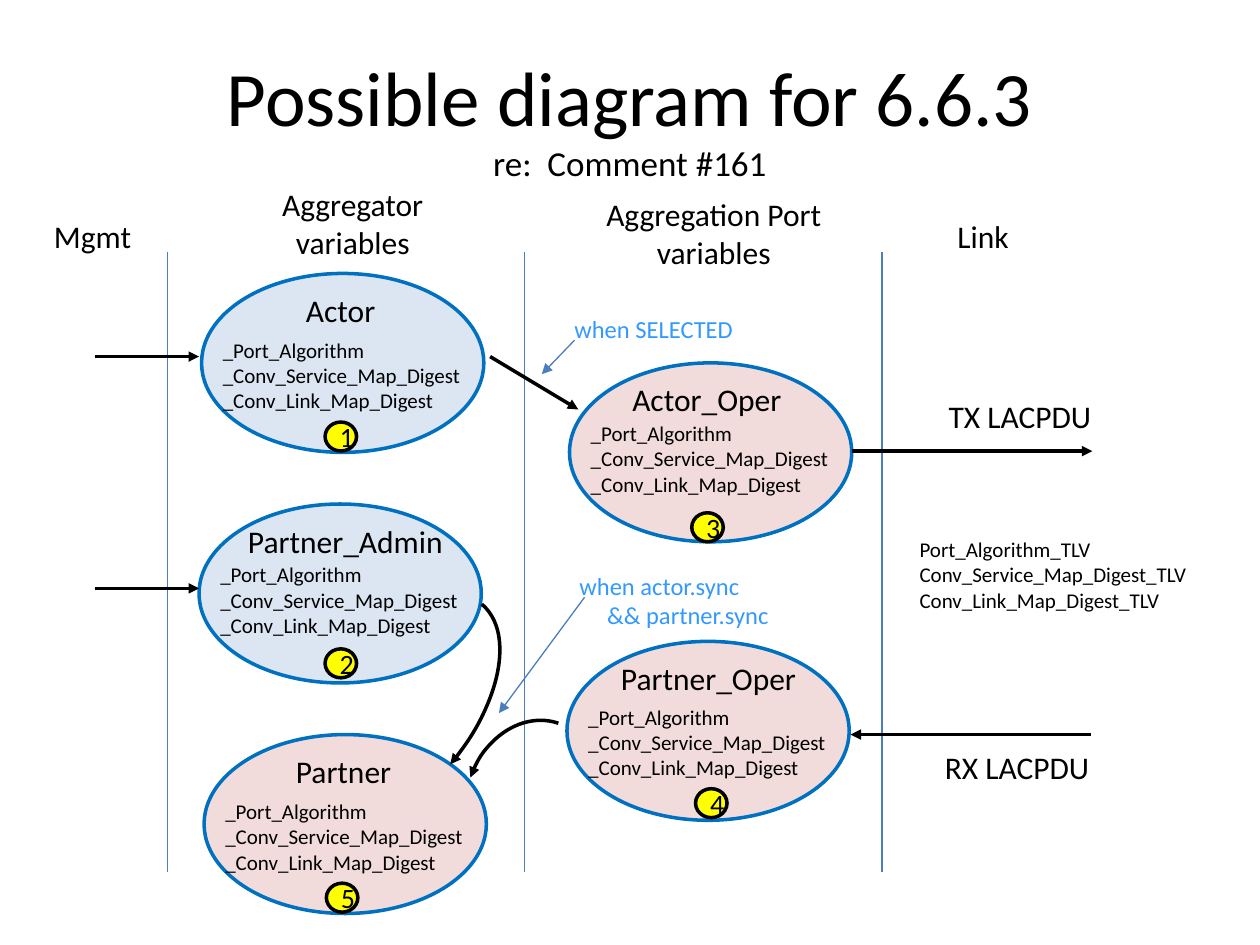
from lxml import etree
from pptx import Presentation
from pptx import util as u
from pptx.dml.color import RGBColor
from pptx.enum import shapes, text
from pptx.oxml.ns import qn

deck = Presentation()
deck.slide_width, deck.slide_height = u.Inches(10), u.Inches(7.5)
CELL = deck.slide_width // 10  # grid: 10 columns by 7.5 rows
FONT = "Calibri"
BLACK, BLUE, RIM, CALLOUT = "000000", "4B7EBC", "0070C0", "3399FF"
ADMIN, OPER, BADGE = "DCE6F2", "F2DCDB", "FFFF00"
color = RGBColor.from_string
LEFT, CENTER = text.PP_ALIGN.LEFT, text.PP_ALIGN.CENTER
OVAL, ARC = shapes.MSO_SHAPE.OVAL, shapes.MSO_SHAPE.ARC


def cells(*values):
    return [u.Emu(round(v * CELL)) for v in values]


def stroke(item, hex_color, width, end=None):
    """Outline an item without shadow; end is headEnd or tailEnd."""
    item.line.color.rgb = color(hex_color)
    item.line.width = u.Pt(width)
    if end:
        etree.SubElement(item.line._get_or_add_ln(), qn("a:" + end), type="triangle")
    etree.SubElement(item._element.spPr, qn("a:effectLst"))


slide = deck.slides.add_slide(deck.slide_layouts[5])
canvas = slide.shapes

# Title and subtitle
title = canvas.title
title.left, title.top, title.width, title.height = cells(0.5, 0.3, 9, 1.25)
title.text_frame.text = "Possible diagram for 6.6.3\vre:  Comment #161"
title.text_frame.vertical_anchor = text.MSO_ANCHOR.MIDDLE
heading = title.text_frame.paragraphs[0]
heading.alignment = CENTER
for run, size in zip(heading.runs, (44, 20)):
    run.font.size, run.font.name = u.Pt(size), FONT
    run.font.color.rgb = color(BLACK)

# Column dividers
for column in range(3):
    x = 1.33 + column * 2.835
    divider = canvas.add_connector(shapes.MSO_CONNECTOR.STRAIGHT, *cells(x, 2, x, 6.92))
    stroke(divider, BLUE, 0.75)

# Labels: wording, box, size, colour, alignment, wrap
labels = [
    ("Aggregator\nvariables", (2.08, 1.42, 1.44, 0.71), 18, BLACK, CENTER, True),
    ("Aggregation Port\nvariables", (4.67, 1.5, 1.99, 0.71), 18, BLACK, CENTER, True),
    ("Mgmt", (0.33, 1.67, 1, 0.4), 18, BLACK, LEFT, True),
    ("Link", (7.5, 1.67, 1.16, 0.4), 18, BLACK, LEFT, True),
    ("TX LACPDU", (7.43, 3.1, 1.41, 0.4), 18, BLACK, LEFT, True),
    ("RX LACPDU", (7.4, 5.89, 1.41, 0.4), 18, BLACK, LEFT, True),
    ("Port_Algorithm_TLV\nConv_Service_Map_Digest_TLV\nConv_Link_Map_Digest_TLV",
     (7.2, 4.21, 2.4, 0.71), 12, BLACK, LEFT, True),
    ("when SELECTED", (4.46, 2.44, 1.47, 0.34), 14, CALLOUT, LEFT, False),
    ("when actor.sync\n&& partner.sync", (4.5, 4.48, 1.71, 0.57), 14, CALLOUT, LEFT, False),
]

# Variable groups: name, name left and width, oval corner, variables top, fill, badge
groups = [
    ("Actor", 2.33, 0.76, 1.6, 2.17, 2.63, ADMIN, "1", 2.58, 3.35),
    ("Partner_Admin", 1.87, 1.76, 1.58, 4, 4.41, ADMIN, "2", 2.58, 5.15),
    ("Partner", 2.25, 0.97, 1.62, 5.83, 6.29, OPER, "5", 2.59, 7.01),
    ("Actor_Oper", 4.92, 1.4, 4.52, 2.88, 3.29, OPER, "3", 5.49, 4.07),
    ("Partner_Oper", 4.83, 1.61, 4.5, 5.09, 5.54, OPER, "4", 5.52, 6.26),
]
VARIABLES = "_Port_Algorithm\n_Conv_Service_Map_Digest\n_Conv_Link_Map_Digest"
for name, name_x, name_w, x, y, variables_y, fill, number, badge_x, badge_y in groups:
    group = canvas.add_shape(OVAL, *cells(x, y, 2.24, 1.42))
    badge = canvas.add_shape(OVAL, *cells(badge_x, badge_y, 0.25, 0.23))
    for oval, inside, rim in ((group, fill, RIM), (badge, BADGE, BLACK)):
        oval.fill.solid()
        oval.fill.fore_color.rgb = color(inside)
        stroke(oval, rim, 2)
    badge.text_frame.text = number
    badge.text_frame.vertical_anchor = text.MSO_ANCHOR.MIDDLE
    digit = badge.text_frame.paragraphs[0]
    digit.alignment = CENTER
    digit.runs[0].font.size, digit.runs[0].font.name = u.Pt(16), FONT
    digit.runs[0].font.color.rgb = color(BLACK)
    labels += [
        (name, (name_x, y + 0.09, name_w, 0.4), 18, BLACK, LEFT, False),
        (VARIABLES, (x + 0.07, variables_y, 2.24, 0.71), 12, BLACK, LEFT, True),
    ]

for wording, box, size, ink, alignment, wrap in labels:
    frame = canvas.add_textbox(*cells(*box)).text_frame
    frame.text = wording
    frame.word_wrap = wrap
    frame.auto_size = text.MSO_AUTO_SIZE.SHAPE_TO_FIT_TEXT
    for line in frame.paragraphs:
        line.alignment = alignment
        line.runs[0].font.size, line.runs[0].font.name = u.Pt(size), FONT
        line.runs[0].font.color.rgb = color(ink)
        if line.text.startswith("&&"):
            line._p.get_or_add_pPr().set("marL", str(u.Inches(0.22)))

# Straight arrows: data flow in black, callout pointers in blue
arrows = [
    ((0.75, 2.83, 1.58, 2.83), BLACK, 2),
    ((0.75, 4.67, 1.58, 4.67), BLACK, 2),
    ((3.89, 2.83, 4.59, 3.25), BLACK, 2),
    ((6.76, 3.58, 8.67, 3.58), BLACK, 2),
    ((8.66, 5.83, 6.75, 5.83), BLACK, 2),
    ((4.56, 2.7, 4.3, 2.97), BLUE, 0.75),
    ((4.64, 4.74, 3.96, 5.66), BLUE, 0.75),
]
for ends, ink, width in arrows:
    arrow = canvas.add_connector(shapes.MSO_CONNECTOR.STRAIGHT, *cells(*ends))
    stroke(arrow, ink, width, "tailEnd")

# Curved arrows into Partner
for box, angle, end in (((2.47, 4.53, 1.25, 2.27), 40, "tailEnd"),
                        ((3.59, 5.82, 1.27, 1.04), 289, "headEnd")):
    curve = canvas.add_shape(ARC, *cells(*box))
    curve.rotation = angle
    curve.fill.background()
    stroke(curve, BLACK, 2, end)

deck.save("out.pptx")
